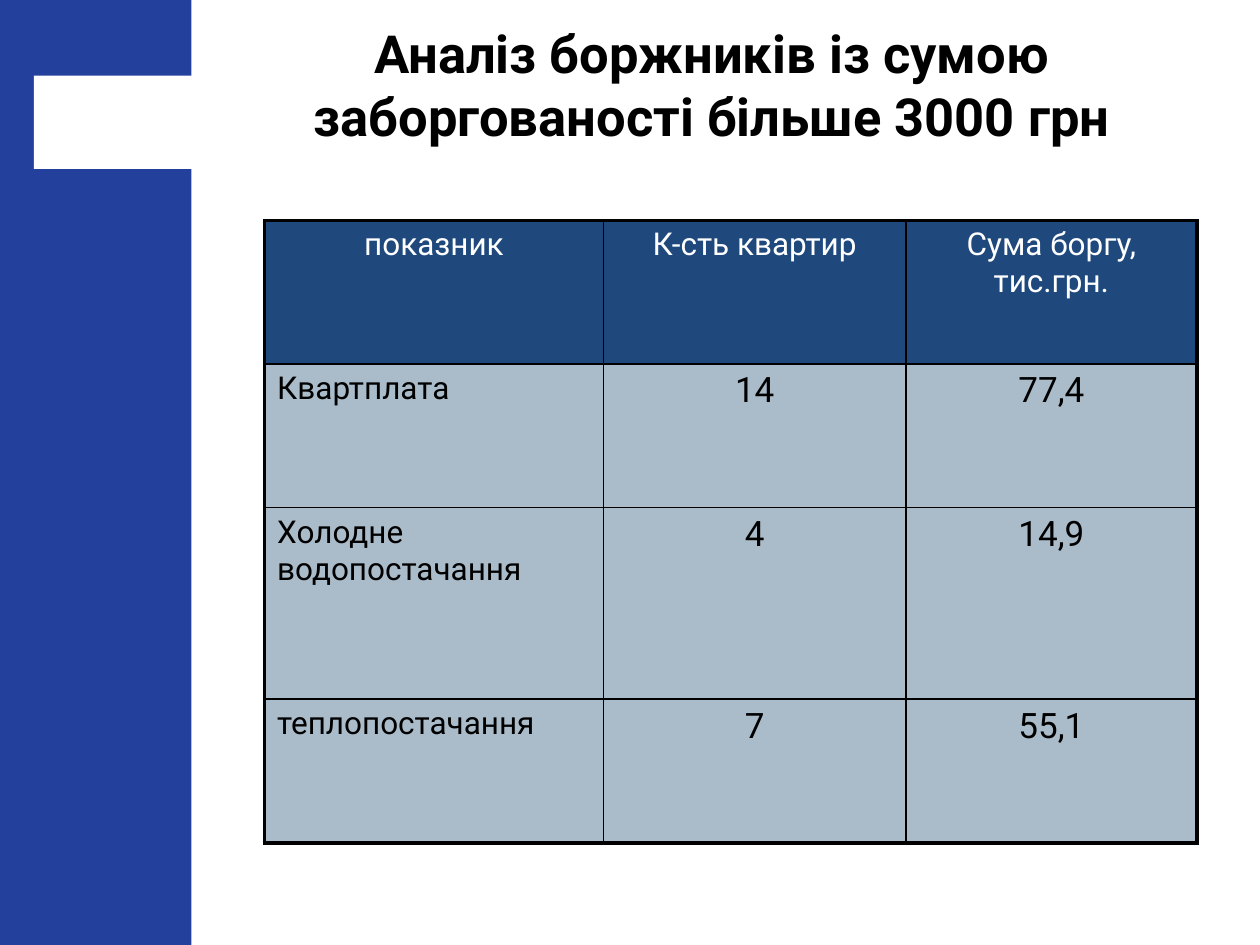
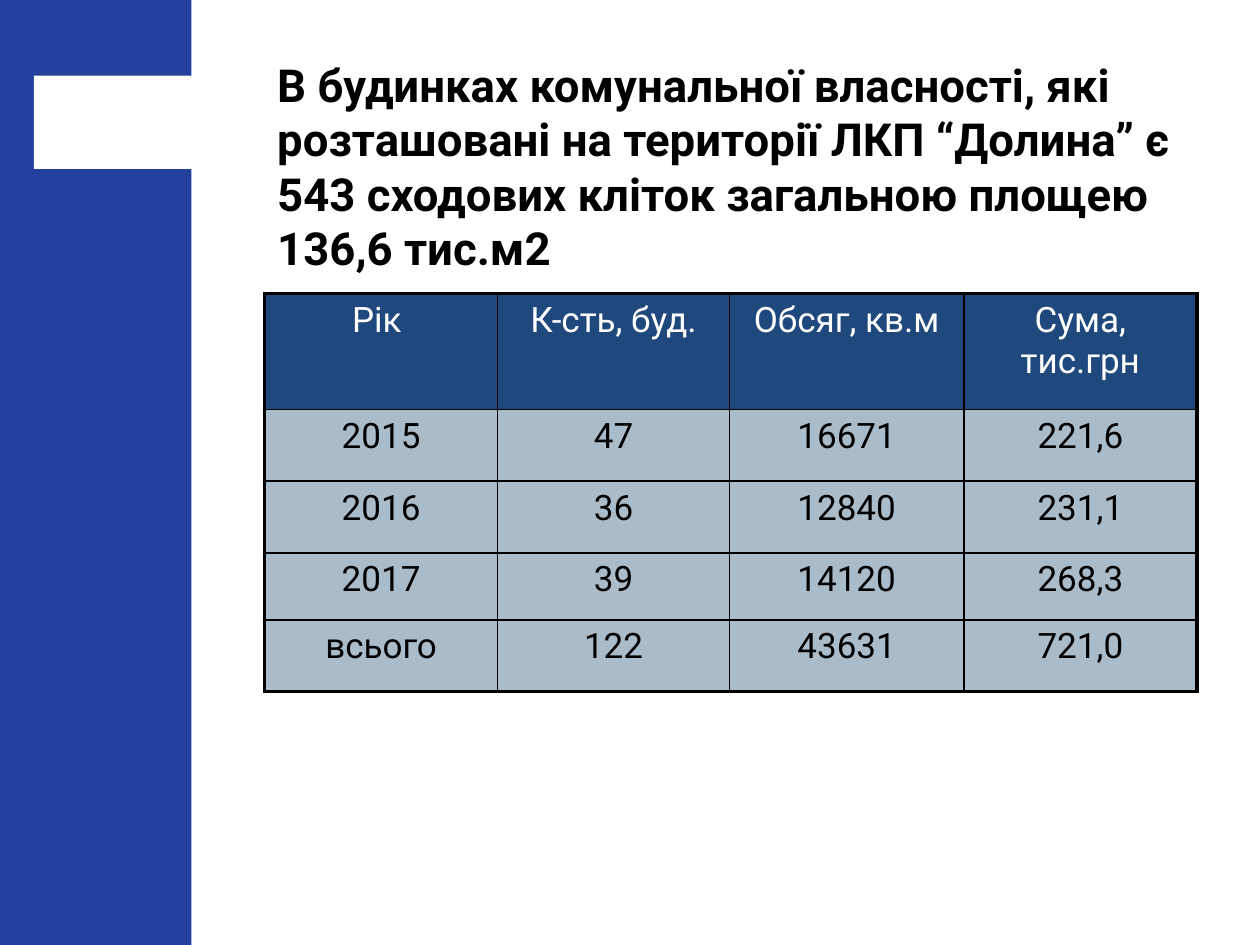
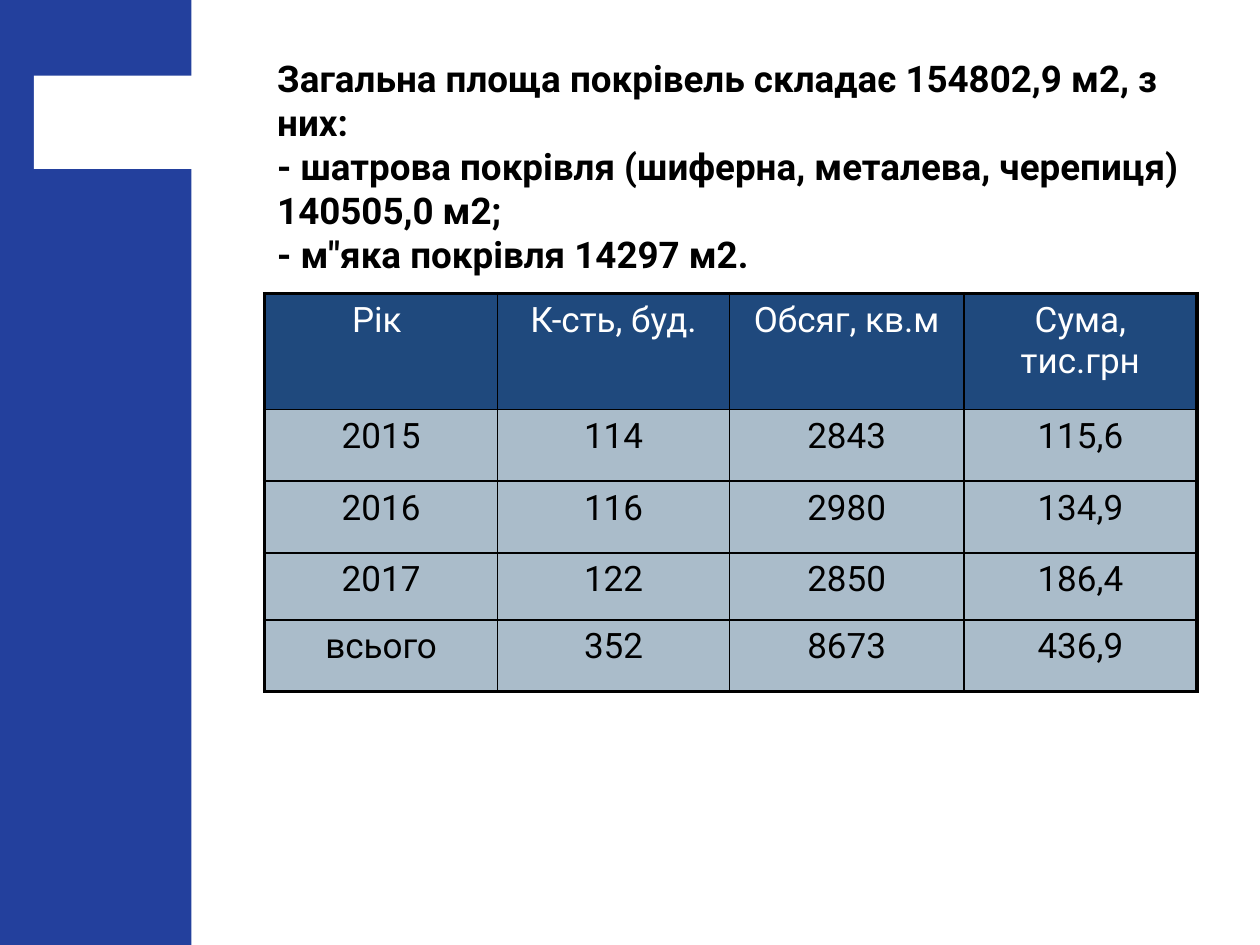
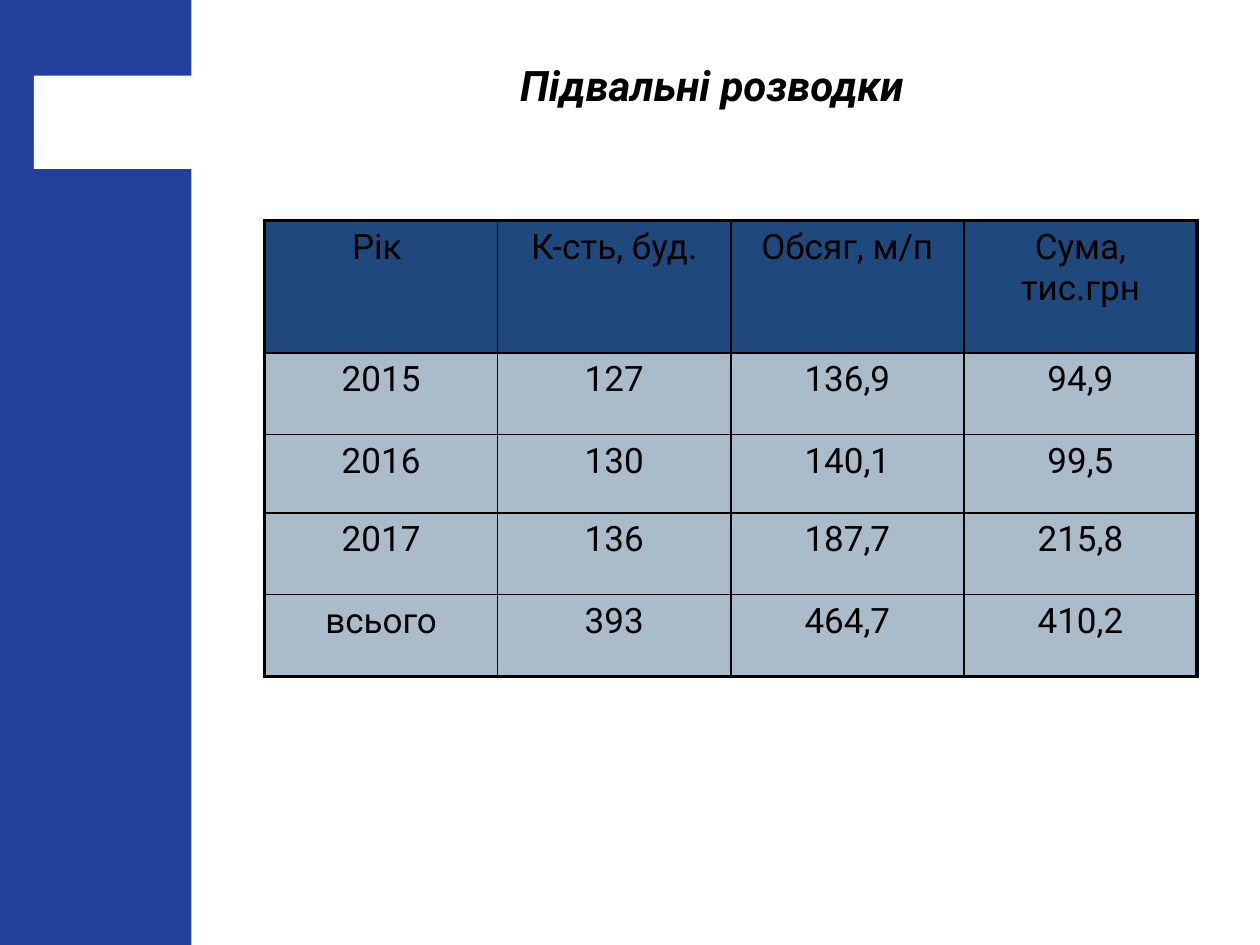
from lxml.etree import SubElement
from pptx import Presentation
from pptx.dml.color import RGBColor
from pptx.enum.shapes import MSO_SHAPE as Shape
from pptx.enum.text import MSO_ANCHOR as Anchor, MSO_AUTO_SIZE as AutoSize, PP_ALIGN as Align
from pptx.oxml.ns import qn
from pptx.util import Inches, Pt

FONT = "Roboto"
BLACK = RGBColor(0x00, 0x00, 0x00)
WHITE = RGBColor(0xFF, 0xFF, 0xFF)
BAND_BLUE = RGBColor(0x23, 0x40, 0x9D)
HEADER_BLUE = RGBColor(0x1F, 0x49, 0x7D)
BODY_GREY = RGBColor(0xAA, 0xBC, 0xCA)
THIN, THICK = 1, 2.25

BANDS = [((0, -0.04, 1.52, 7.63), BAND_BLUE), ((0.27, 0.6, 1.33, 0.74), WHITE)]
SHORT_TITLE = (2.05, 0.15, 7.2, 1.04)
TALL_TITLE = (2.1, 0.3, 7.4, 2.03)
HIGH_TABLE = (2.1, 1.75, 7.4)
LOW_TABLE = (2.1, 2.33, 7.4)
YEAR_ROWS = [0.92, 0.57, 0.57, 0.53, 0.57]

DEBTORS = [
    ["показник", "К-сть квартир", "Сума боргу, тис.грн."],
    ["Квартплата", "14", "77,4"],
    ["Холодне водопостачання", "4", "14,9"],
    ["теплопостачання", "7", "55,1"],
]
STAIRWELLS = [
    ["Рік ", "К-сть, буд.", "Обсяг, кв.м", "Сума, тис.грн"],
    ["2015", "47", "16671", "221,6"],
    ["2016", "36", "12840", "231,1"],
    ["2017", "39", "14120", "268,3"],
    ["всього", "122", "43631", "721,0"],
]
ROOFS = [
    STAIRWELLS[0],
    ["2015", "114", "2843", "115,6"],
    ["2016", "116", "2980", "134,9"],
    ["2017", "122", "2850", "186,4"],
    ["всього", "352", "8673", "436,9"],
]
BASEMENT_PIPES = [
    ["Рік ", "К-сть, буд.", "Обсяг, м/п", "Сума, тис.грн"],
    ["2015", "127", "136,9", "94,9"],
    ["2016", "130", "140,1", "99,5"],
    ["2017", "136", "187,7", "215,8"],
    ["всього", "393", "464,7", "410,2"],
]


def write(frame, text, size, color=BLACK, align=Align.CENTER, bold=False, italic=False):
    """Fill a text frame with one formatted paragraph; newlines become line breaks."""
    para = frame.paragraphs[0]
    para.text = text
    para.alignment = align
    para.space_before = Pt(0)
    for span in para.runs:
        font = span.font
        font.name, font.size = FONT, Pt(size)
        font.bold, font.italic = bold, italic
        font.color.rgb = color


def add_bands(page, master):
    """Place the side band and its notch at the back of the master."""
    tree = master.shapes.element
    for position, (box, color) in enumerate(BANDS, start=2):
        band = page.shapes.add_shape(Shape.RECTANGLE, *map(Inches, box))
        band.shadow.inherit = False
        band.fill.solid()
        band.fill.fore_color.rgb = color
        band.line.fill.background()
        tree.insert(position, band.element)


def add_title(page, box, text, size, **style):
    """Move the title placeholder into the box and write its text."""
    title = page.shapes.title
    title.left, title.top, title.width, title.height = map(Inches, box)
    frame = title.text_frame
    frame.word_wrap = True
    frame.auto_size = AutoSize.NONE
    frame.vertical_anchor = Anchor.MIDDLE
    write(frame, text, size, bold=True, **style)


def set_borders(cell, widths):
    """Draw black cell borders with the given widths by side tag."""
    properties = cell._tc.get_or_add_tcPr()
    for position, (side, width) in enumerate(widths.items()):
        line = SubElement(properties, qn(f"a:{side}"), w=str(Pt(width)))
        fill = SubElement(line, qn("a:solidFill"))
        SubElement(fill, qn("a:srgbClr"), val=str(BLACK))
        properties.insert(position, line)


def add_grid(page, box, rows, widths, heights, header_color=WHITE,
             header_size=20, label_size=20, label_align=Align.CENTER):
    """Build a table with a dark header row and a thick outer frame."""
    left, top, width = box
    area = map(Inches, (left, top, width, sum(heights)))
    table = page.shapes.add_table(len(rows), len(widths), *area).table
    for column, column_width in zip(table.columns, widths):
        column.width = Inches(column_width)
    for row, height in zip(table.rows, heights):
        row.height = Inches(height)
    last_row, last_column = len(rows) - 1, len(widths) - 1
    for r, values in enumerate(rows):
        for c, value in enumerate(values):
            cell = table.cell(r, c)
            cell.fill.solid()
            cell.fill.fore_color.rgb = BODY_GREY if r else HEADER_BLUE
            if r == 0:
                write(cell.text_frame, value, header_size, color=header_color)
            elif c == 0:
                write(cell.text_frame, value, label_size, align=label_align)
            else:
                write(cell.text_frame, value, 20)
            set_borders(cell, {
                "lnL": THICK if c == 0 else THIN,
                "lnR": THICK if c == last_column else THIN,
                "lnT": THICK if r == 0 else THIN,
                "lnB": THICK if r == last_row else THIN,
            })


def debtors_page(page):
    """Fill the page on large debts."""
    add_title(page, SHORT_TITLE, "Аналіз боржників із сумою заборгованості більше 3000 грн", 30)
    add_grid(page, HIGH_TABLE, DEBTORS, [2.69, 2.4, 2.31], [1.14, 1.14, 1.52, 1.14],
             header_size=18, label_size=18, label_align=Align.LEFT)


def yearly_page(page, text, size, rows):
    """Fill a page with a tall left-aligned title and a yearly table."""
    add_title(page, TALL_TITLE, text, size, align=Align.LEFT)
    add_grid(page, LOW_TABLE, rows, [1.85, 1.84, 1.86, 1.85], YEAR_ROWS)


def basement_page(page):
    """Fill the page on basement pipework."""
    add_title(page, SHORT_TITLE, "Підвальні розводки", 24, italic=True)
    add_grid(page, HIGH_TABLE, BASEMENT_PIPES, [1.85] * 4, [1.05, 0.65, 0.62, 0.65, 0.65],
             header_color=BLACK)


def main():
    """Build the four pages and save the deck."""
    deck = Presentation()
    deck.slide_width, deck.slide_height = Inches(10), Inches(7.5)
    title_only = deck.slide_layouts.get_by_name("Title Only")
    debtors, stairwells, roofs, basement = [deck.slides.add_slide(title_only) for _ in range(4)]
    add_bands(debtors, deck.slide_master)
    debtors_page(debtors)
    yearly_page(stairwells, "В будинках комунальної власності, які розташовані на території "
                "ЛКП “Долина” є 543 сходових кліток загальною площею 136,6 тис.м2", 26, STAIRWELLS)
    yearly_page(roofs, "Загальна площа покрівель складає 154802,9 м2, з них:\n"
                "- шатрова покрівля (шиферна, металева, черепиця) 140505,0 м2;\n"
                "- м\"яка покрівля 14297 м2.", 21, ROOFS)
    basement_page(basement)
    deck.save("out.pptx")


if __name__ == "__main__":
    main()
